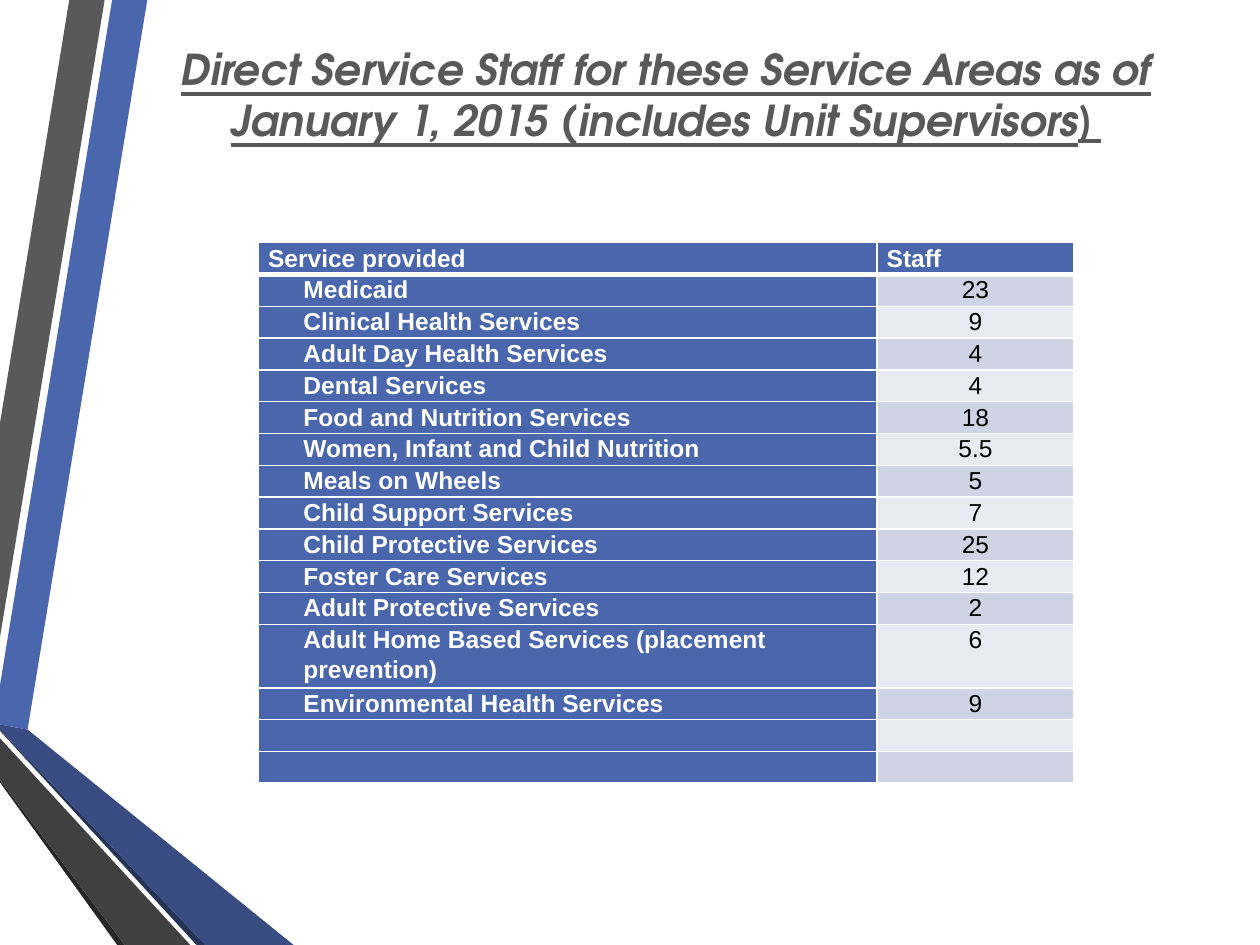
from lxml import etree
from pptx import Presentation
from pptx import util as u
from pptx.dml.color import RGBColor
from pptx.enum import text
from pptx.oxml import ns

BLUE = RGBColor(0x4A, 0x66, 0xAC)
NAVY = RGBColor(0x38, 0x4C, 0x81)
DEEP = RGBColor(0x25, 0x33, 0x56)
GRAY = RGBColor(0x59, 0x59, 0x59)
DARK = RGBColor(0x40, 0x40, 0x40)
COAL = RGBColor(0x26, 0x26, 0x26)
WHITE = RGBColor(0xFF, 0xFF, 0xFF)
BLACK = RGBColor(0, 0, 0)
BANDS = RGBColor(0xD0, 0xD3, 0xE3), RGBColor(0xE9, 0xEA, 0xF1)

# Content: title runs (text, font, italic), table rows, ribbon outlines
TITLE = [
    ("Direct Service Staff for these Service Areas as of January 1, 2015 "
     "(includes Unit Supervisors", "TeX Gyre Adventor", True),
    (") ", "Calibri", False),
]
ROWS = [
    ("Service provided", "Staff"),
    ("Medicaid", "23"),
    ("Clinical Health Services", "9"),
    ("Adult Day Health Services", "4"),
    ("Dental Services", "4"),
    ("Food and Nutrition Services", "18"),
    ("Women, Infant and Child Nutrition", "5.5"),
    ("Meals on Wheels", "5"),
    ("Child Support Services", "7"),
    ("Child Protective Services", "25"),
    ("Foster Care Services", "12"),
    ("Adult Protective Services", "2"),
    ("Adult Home Based Services (placement prevention)", "6"),
    ("Environmental Health Services", "9"),
    ("", ""),
    ("", ""),
]
TALL = 12  # the row whose label takes two lines
COLS = 353.5, 112.3
LINE = 18.1
RIBBONS = [
    (BLUE, [(0, 391.7), (0, 414), (15.8, 416.9), (84.2, 0), (64.1, 0)]),
    (GRAY, [(59.8, 0), (39.6, 0), (0, 241.9), (0, 364.3)]),
    (COAL, [(0, 445.7), (0, 447.1), (67, 540), (71.3, 540)]),
    (DEEP, [(0, 416.9), (0, 417.6), (112.3, 540), (117.4, 540)]),
    (NAVY, [(0, 416.9), (117.4, 540), (167.8, 540), (15.8, 416.9), (0, 414)]),
    (DARK, [(0, 445.7), (71.3, 540), (108.7, 540), (0, 421.9)]),
]

deck = Presentation()
deck.slide_width, deck.slide_height = u.Pt(720), u.Pt(540)
slide = deck.slides.add_slide(deck.slide_layouts[6])


def style(run, size, face, color, bold):
    font = run.font
    font.size, font.name, font.bold = u.Pt(size), face, bold
    font.color.rgb = color


def edge(cell, side, width):
    line = etree.SubElement(cell._tc.get_or_add_tcPr(), ns.qn("a:ln" + side),
                            w=str(u.Pt(width)))
    fill = etree.SubElement(line, ns.qn("a:solidFill"))
    etree.SubElement(fill, ns.qn("a:srgbClr"), val=str(WHITE))


# Ribbons on the left
for color, spots in RIBBONS:
    spots = [(u.Pt(x), u.Pt(y)) for x, y in spots]
    pen = slide.shapes.build_freeform(*spots[0])
    pen.add_line_segments(spots[1:], close=True)
    band = pen.convert_to_shape()
    band.shadow.inherit = False
    band.fill.solid()
    band.fill.fore_color.rgb = color
    band.line.fill.background()

# Title, raised within its box
box = slide.shapes.add_textbox(u.Pt(77), u.Pt(12.2), u.Pt(607), u.Pt(126))
frame = box.text_frame
frame.word_wrap = True
frame.vertical_anchor = text.MSO_ANCHOR.MIDDLE
frame.margin_bottom = u.Pt(46.7)
para = frame.paragraphs[0]
para.alignment = text.PP_ALIGN.CENTER
for words, face, slant in TITLE:
    run = para.add_run()
    run.text = words
    style(run, 24.3, face, GRAY, True)
    run.font.italic, run.font.underline = slant, True

# Staff table
high = LINE * (len(ROWS) + 1)
grid = slide.shapes.add_table(len(ROWS), len(COLS), u.Pt(147.8), u.Pt(138.7),
                              u.Pt(sum(COLS)), u.Pt(high)).table
for col, width in zip(grid.columns, COLS):
    col.width = u.Pt(width)
for r, row in enumerate(ROWS):
    grid.rows[r].height = u.Pt(LINE * (2 if r == TALL else 1))
    for c, words in enumerate(row):
        cell = grid.cell(r, c)
        head = r == 0 or c == 0
        cell.margin_left = cell.margin_right = u.Pt(5.4)
        cell.margin_top = cell.margin_bottom = 0
        for side in "LRTB":
            thick = (r, side) in ((0, "B"), (1, "T"))
            edge(cell, side, 3 if thick else 1)
        cell.fill.solid()
        cell.fill.fore_color.rgb = BLUE if head else BANDS[(r - 1) % 2]
        para = cell.text_frame.paragraphs[0]
        para.line_spacing = 1.08
        if r and c:
            para.alignment = text.PP_ALIGN.CENTER
        elif r:
            para._p.get_or_add_pPr().set("marL", str(u.Pt(20.2)))
        if words:
            para.text = words
            style(para.runs[0], 14, "Arial", WHITE if head else BLACK, head)
        else:
            etree.SubElement(para._p, ns.qn("a:endParaRPr"), sz="1400")

deck.save("out.pptx")
